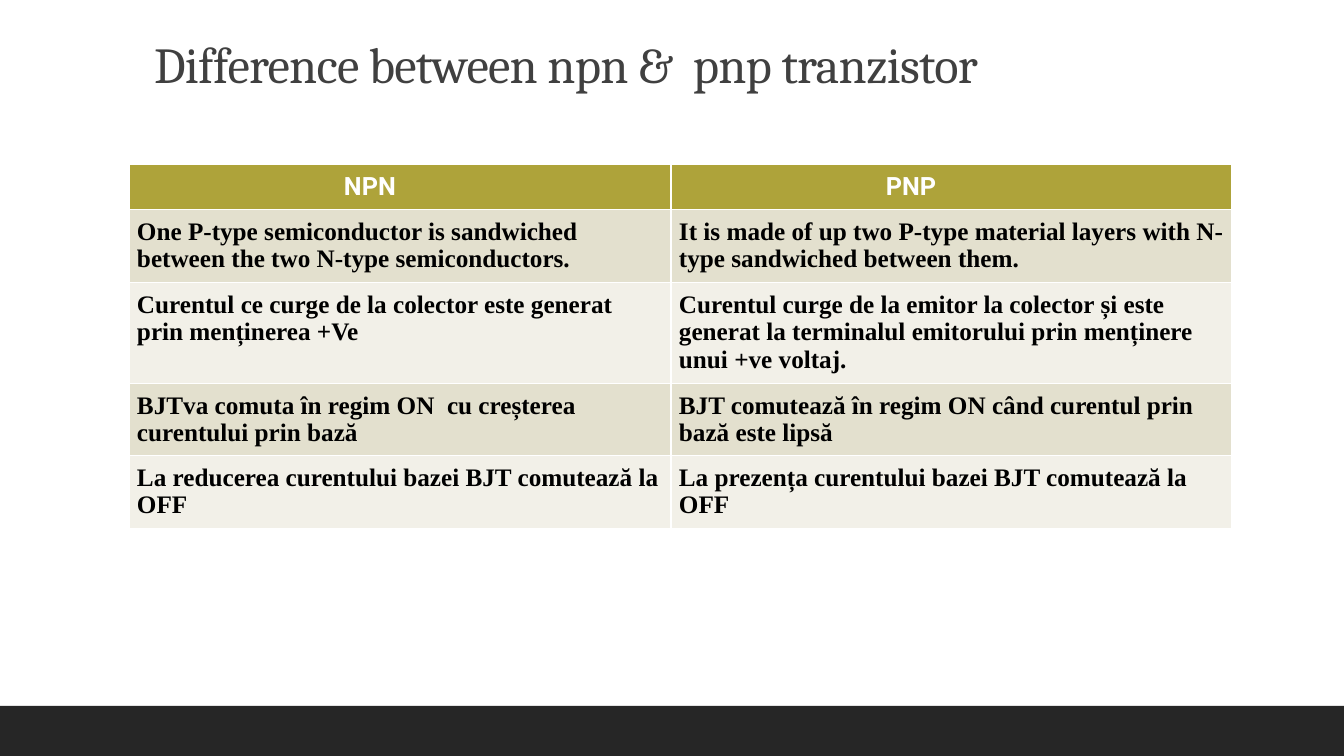
from lxml.etree import SubElement
from pptx import Presentation
from pptx.dml.color import RGBColor
from pptx.enum.shapes import MSO_SHAPE as Preset
from pptx.enum.text import MSO_ANCHOR as Anchor, MSO_AUTO_SIZE as AutoSize, PP_ALIGN as Align
from pptx.oxml.ns import qn
from pptx.util import Emu, Pt

EMU_PER_PX = 914400 / 100.8
SLIDE_WIDTH, SLIDE_HEIGHT = 1344, 756
COLORS = {
    "bar": "262626",
    "title": "404040",
    "header": "AEA33A",
    "odd_row": "E3E0CE",
    "even_row": "F2F0E8",
    "white": "FFFFFF",
    "black": "000000",
}
COLUMN_WIDTHS = [542, 561]
ROW_HEIGHTS = [45, 73, 101, 72, 73]
CELL_INSET = 8
HEADER_INDENT = 215
COMPARISON = [
    ("NPN", "PNP"),
    ("One P-type semiconductor is sandwiched between the two N-type semiconductors.",
     "It is made of up two P-type material layers with N-type sandwiched between them."),
    ("Curentul ce curge de la colector este generat prin menținerea +Ve",
     "Curentul curge de la emitor la colector și este generat la terminalul emitorului "
     "prin menținere unui +ve voltaj."),
    ("BJTva comuta în regim ON  cu creșterea curentului prin bază",
     "BJT comutează în regim ON când curentul prin bază este lipsă"),
    ("La reducerea curentului bazei BJT comutează la OFF",
     "La prezența curentului bazei BJT comutează la OFF"),
]


def px(length):
    return Emu(round(length * EMU_PER_PX))


def color(name):
    return RGBColor.from_string(COLORS[name])


def add_run(paragraph, text, size, family, ink, bold=False):
    run = paragraph.add_run()
    run.text = text
    run.font.size = Pt(size)
    run.font.name = family
    run.font.bold = bold
    run.font.color.rgb = color(ink)
    return run


def add_footer_bar(slide, top):
    bar = slide.shapes.add_shape(
        Preset.RECTANGLE, 0, px(top), px(SLIDE_WIDTH), px(SLIDE_HEIGHT - top))
    bar.shadow.inherit = False
    bar.fill.solid()
    bar.fill.fore_color.rgb = color("bar")
    bar.line.fill.background()


def fill_title(slide, text):
    title = slide.shapes.title
    title.left, title.top, title.width, title.height = map(px, (144, 33, 1122, 66))
    frame = title.text_frame
    frame.auto_size = AutoSize.NONE
    frame.vertical_anchor = Anchor.BOTTOM
    paragraph = frame.paragraphs[0]
    paragraph.alignment = Align.LEFT
    paragraph.line_spacing = 0.9
    run = add_run(paragraph, text, 36, "Cambria", "title")
    run.font._element.set("spc", "-50")


def add_borders(cell):
    properties = cell._tc.get_or_add_tcPr()
    for position, side in enumerate(("lnL", "lnR", "lnT", "lnB")):
        border = SubElement(properties, qn(f"a:{side}"), w=str(Pt(1)))
        fill = SubElement(border, qn("a:solidFill"))
        SubElement(fill, qn("a:srgbClr"), val=COLORS["white"])
        properties.insert(position, border)


def fill_cell(cell, text, row):
    is_header = row == 0
    cell.margin_left = px(HEADER_INDENT if is_header else CELL_INSET)
    cell.margin_right = cell.margin_top = cell.margin_bottom = px(CELL_INSET)
    background = "header" if is_header else "odd_row" if row % 2 else "even_row"
    cell.fill.solid()
    cell.fill.fore_color.rgb = color(background)
    add_borders(cell)
    family, ink = ("Roboto", "white") if is_header else ("Times New Roman", "black")
    add_run(cell.text_frame.paragraphs[0], text, 18, family, ink, bold=True)


def add_comparison(slide, left, top):
    table = slide.shapes.add_table(
        len(COMPARISON), len(COLUMN_WIDTHS), px(left), px(top),
        px(sum(COLUMN_WIDTHS)), px(sum(ROW_HEIGHTS))).table
    for column, width in zip(table.columns, COLUMN_WIDTHS):
        column.width = px(width)
    for row, (height, texts) in enumerate(zip(ROW_HEIGHTS, COMPARISON)):
        table.rows[row].height = px(height)
        for column, text in enumerate(texts):
            fill_cell(table.cell(row, column), text, row)


def main():
    deck = Presentation()
    deck.slide_width, deck.slide_height = px(SLIDE_WIDTH), px(SLIDE_HEIGHT)
    slide = deck.slides.add_slide(deck.slide_layouts[5])
    add_footer_bar(slide, 706)
    fill_title(slide, "Difference between npn &  pnp tranzistor")
    add_comparison(slide, 129, 164)
    deck.save("out.pptx")


if __name__ == "__main__":
    main()
